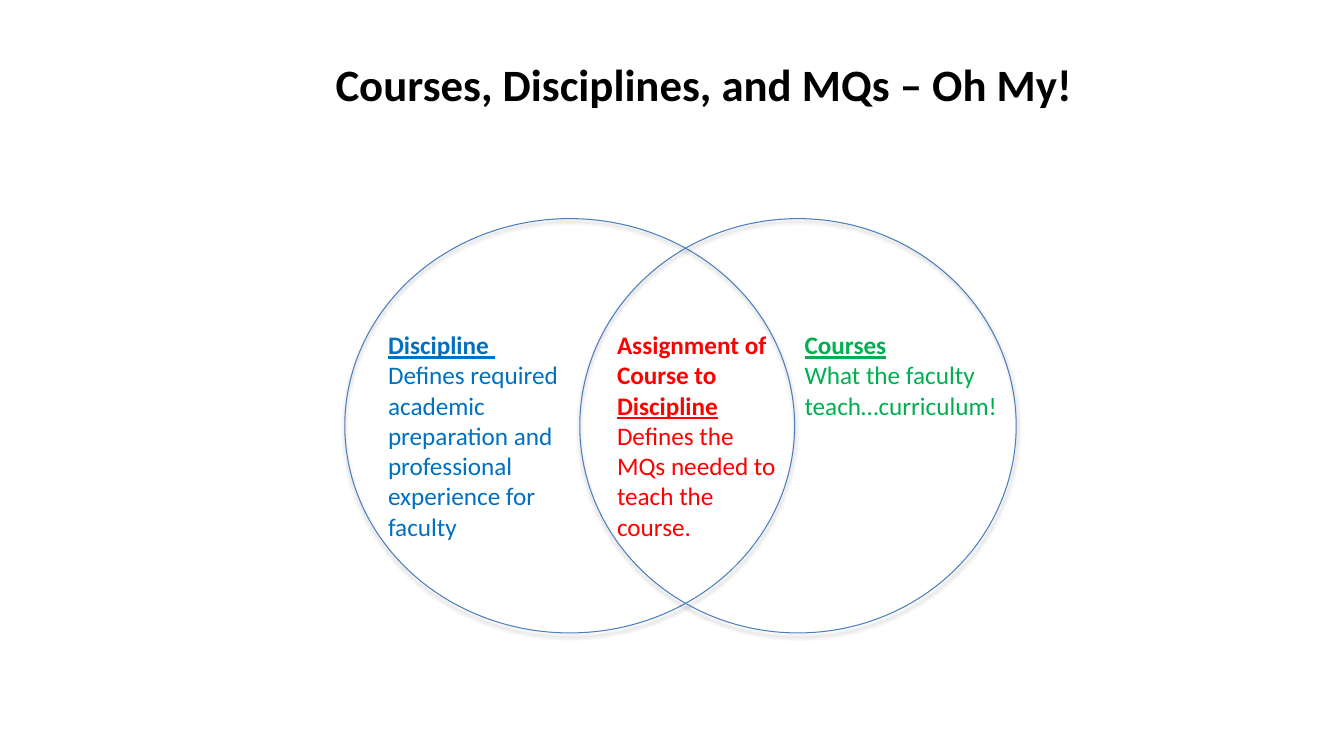
from lxml import etree
from pptx import Presentation
from pptx.dml.color import RGBColor
from pptx.enum.shapes import MSO_SHAPE
from pptx.enum.text import MSO_ANCHOR, MSO_AUTO_SIZE, PP_ALIGN
from pptx.oxml.ns import qn
from pptx.util import Cm, Pt

OVAL = MSO_SHAPE.OVAL
MIDDLE = MSO_ANCHOR.MIDDLE
GROW = MSO_AUTO_SIZE.SHAPE_TO_FIT_TEXT
LEFT, CENTER = PP_ALIGN.LEFT, PP_ALIGN.CENTER

FONT = "Calibri"
BLUE, RED, GREEN, BLACK = "0070C0", "FF0000", "00B050", "000000"
OUTLINE = "4B7EBC"
TITLE_ONLY = 5


def rgb(value):
    """Return the colour for a hex string."""
    return RGBColor.from_string(value)


def add_run(p, text, color=BLACK, size=18, bold=False, underline=False):
    """Append a formatted run to a paragraph."""
    r = p.add_run()
    r.text = text
    r.font.name = FONT
    r.font.size = Pt(size)
    r.font.bold = bold
    r.font.underline = underline
    r.font.color.rgb = rgb(color)


def add_shadow(sp):
    """Give a shape a soft shadow straight below it."""
    sp.shadow.inherit = False
    effects = sp._element.spPr.find(qn("a:effectLst"))
    shadow = etree.SubElement(effects, qn("a:outerShdw"), blurRad=str(Pt(3.1)),
                              dist=str(Pt(1.8)), dir="5400000", rotWithShape="0")
    color = etree.SubElement(shadow, qn("a:srgbClr"), val=BLACK)
    etree.SubElement(color, qn("a:alpha"), val="35000")


def add_circle(s, x, y, w, h):
    """Draw one outlined circle of the diagram."""
    sp = s.shapes.add_shape(OVAL, Cm(x), Cm(y), Cm(w), Cm(h))
    sp.fill.background()
    sp.line.color.rgb = rgb(OUTLINE)
    sp.line.width = Pt(0.75)
    add_shadow(sp)


def add_label(s, x, y, w, h, color, paragraphs):
    """Write a label whose paragraphs are lists of (text, format) runs."""
    tf = s.shapes.add_textbox(Cm(x), Cm(y), Cm(w), Cm(h)).text_frame
    tf.word_wrap = True
    tf.auto_size = GROW
    for i, runs in enumerate(paragraphs):
        p = tf.add_paragraph() if i else tf.paragraphs[0]
        p.alignment = LEFT
        for text, style in runs:
            add_run(p, text, color=color, **style)


def add_title(s, x, y, w, h):
    """Place and format the slide title."""
    sp = s.shapes.title
    sp.left, sp.top, sp.width, sp.height = Cm(x), Cm(y), Cm(w), Cm(h)
    tf = sp.text_frame
    tf.word_wrap = True
    tf.auto_size = GROW
    tf.vertical_anchor = MIDDLE
    p = tf.paragraphs[0]
    p.alignment = CENTER
    add_run(p, "Courses, Disciplines, and MQs – Oh My!", size=32, bold=True)


def add_venn(s, x, y, w, h):
    """Draw two overlapping circles and their three labels."""
    left_w, right_w = 0.67 * w, 0.65 * w
    add_circle(s, x, y, left_w, h)
    add_circle(s, x + w - right_w, y, right_w, h)

    bold = {"bold": True}
    heading = {"bold": True, "underline": True}
    label_y = y + 2.67
    add_label(s, x + 0.84, label_y, 5.77, 5.64, BLUE, [
        [("Discipline ", heading)],
        [("Defines required academic preparation and professional "
          "experience for faculty", {})],
    ])
    add_label(s, x + 6.61, label_y, 4.6, 6.4, RED, [
        [("Assignment of Course to ", bold), ("Discipline", heading),
         (" Defines the MQs needed to teach the course.", {})],
    ])
    add_label(s, x + left_w, label_y, 5.56, 2.57, GREEN, [
        [("Courses", heading)],
        [("What the faculty teach…curriculum!", {})],
    ])


def main():
    """Build the slide and save it."""
    prs = Presentation()
    prs.slide_width, prs.slide_height = Cm(33.87), Cm(19.05)
    s = prs.slides.add_slide(prs.slide_layouts[TITLE_ONLY])
    add_title(s, 7.98, 1.3, 19.53, 1.63)
    add_venn(s, 8.69, 5.51, 16.92, 10.44)
    prs.save("out.pptx")


if __name__ == "__main__":
    main()
